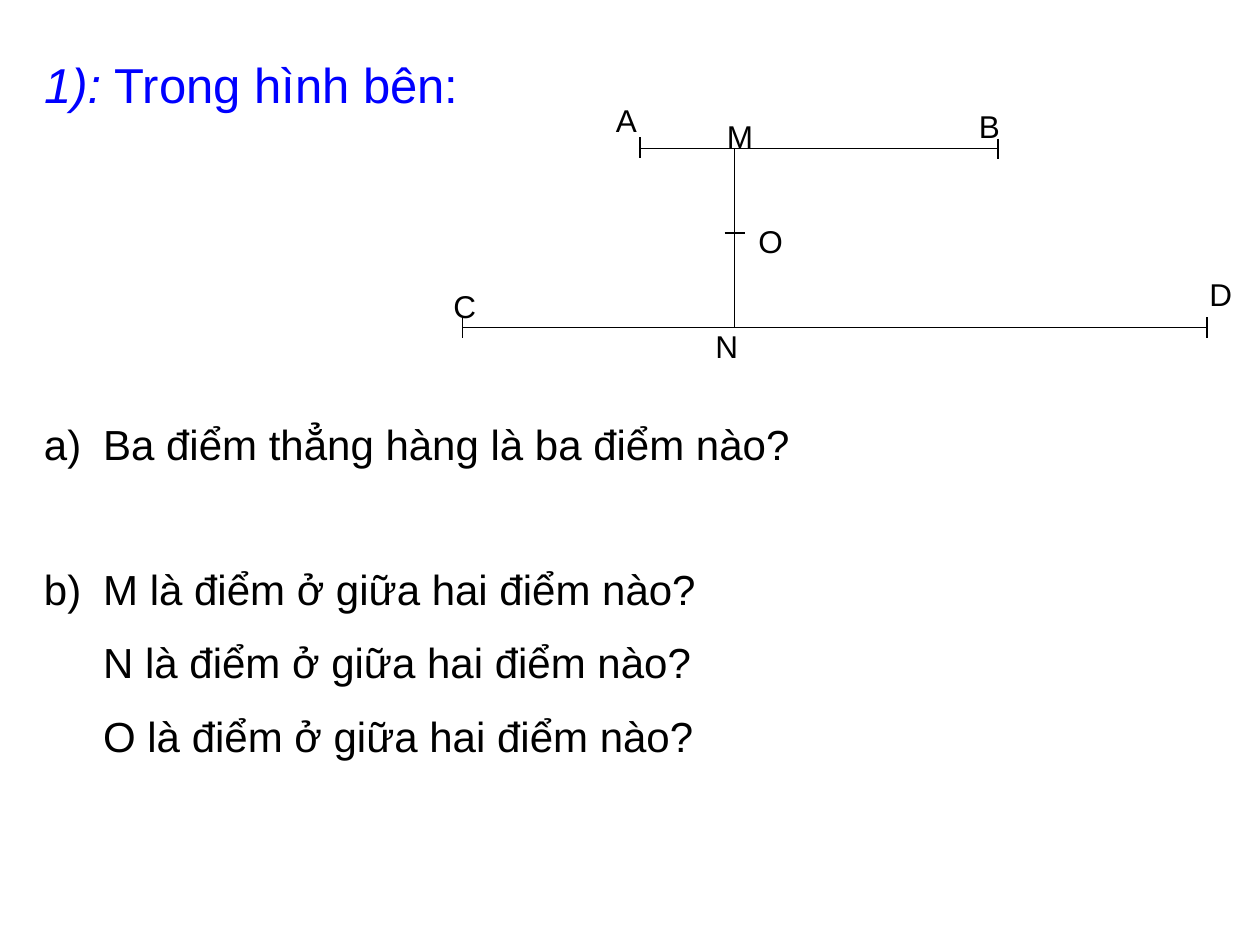
from pptx import Presentation
from pptx import util as u
from pptx.dml.color import RGBColor
from pptx.enum import shapes, text
from pptx.oxml.ns import qn
from lxml import etree

THEME = {
    "font": "Arial",
    "blue": RGBColor(0, 0, 255),
    "black": RGBColor(0, 0, 0),
    "title": u.Pt(28),
    "body": u.Pt(24),
    "label": u.Pt(18),
    "line": u.Pt(0.75),
}


def add_run(p, words, size, color, italic=False):
    r = p.add_run()
    r.text = words
    for name, value in {"name": THEME["font"], "size": size, "italic": italic}.items():
        setattr(r.font, name, value)
    r.font.color.rgb = color


def place(sp, left, top, width, height):
    box = {"left": left, "top": top, "width": width, "height": height}
    for name, value in box.items():
        setattr(sp, name, u.Inches(value))
    tf = sp.text_frame
    frame = {"word_wrap": True, "auto_size": text.MSO_AUTO_SIZE.NONE,
             "vertical_anchor": text.MSO_ANCHOR.TOP}
    for name, value in frame.items():
        setattr(tf, name, value)
    return tf


prs = Presentation()
prs.slide_width, prs.slide_height = u.Inches(10), u.Inches(7.5)
s = prs.slides.add_slide(prs.slide_layouts[5])

tf = place(s.shapes.title, 0.25, 0.38, 4.5, 0.5)
p = tf.paragraphs[0]
p.alignment = text.PP_ALIGN.LEFT
add_run(p, "1): ", THEME["title"], THEME["blue"], italic=True)
add_run(p, "Trong hình bên:", THEME["title"], THEME["blue"])

questions = [
    ("Ba điểm thẳng hàng là ba điểm nào?", True, 0),
    ("M là điểm ở giữa hai điểm nào?", True, 54),
    ("N là điểm ở giữa hai điểm nào?", False, 13.3),
    ("O là điểm ở giữa hai điểm nào?", False, 13.3),
]
tf = place(s.shapes.add_textbox(0, 0, 0, 0), 0.25, 3.27, 9.75, 2.9)
for i, (words, numbered, gap) in enumerate(questions):
    p = tf.add_paragraph() if i else tf.paragraphs[0]
    p.space_before = u.Pt(gap)
    add_run(p, words, THEME["body"], THEME["black"])
    pPr = p._p.get_or_add_pPr()
    indent = u.Inches(0.47)
    pPr.set("marL", str(indent))
    pPr.set("indent", str(-indent if numbered else 0))
    if numbered:
        font = etree.SubElement(pPr, qn("a:buFont"))
        font.set("typeface", THEME["font"])
        number = etree.SubElement(pPr, qn("a:buAutoNum"))
        number.set("type", "alphaLcParenR")

ax, bx, cx, dx, mx = 5.08, 7.92, 3.67, 9.58, 5.83
ab_y, o_y, cd_y = 1.18, 1.85, 2.6
tick = 0.08
segments = [(ax, ab_y, bx, ab_y), (cx, cd_y, dx, cd_y), (mx, ab_y, mx, cd_y)]
segments += [(x, y - tick, x, y + tick)
             for x, y in [(ax, 1.17), (cx, cd_y), (dx, cd_y), (bx, ab_y)]]
segments.append((mx - tick, o_y, mx + tick, o_y))
for ends in segments:
    line = s.shapes.add_connector(shapes.MSO_CONNECTOR.STRAIGHT, *map(u.Inches, ends))
    line.line.color.rgb = THEME["black"]
    line.line.width = THEME["line"]
    etree.SubElement(line._element.spPr, qn("a:effectLst"))

labels = {"A": (4.79, 0.75), "O": (5.92, 1.71), "M": (5.67, 0.88), "B": (7.67, 0.8),
          "D": (9.5, 2.13), "C": (3.5, 2.23), "N": (5.58, 2.55)}
for point, (left, top) in labels.items():
    tf = place(s.shapes.add_textbox(0, 0, 0, 0), left, top, 0.5, 0.4)
    add_run(tf.paragraphs[0], point, THEME["label"], THEME["black"])

prs.save("out.pptx")
